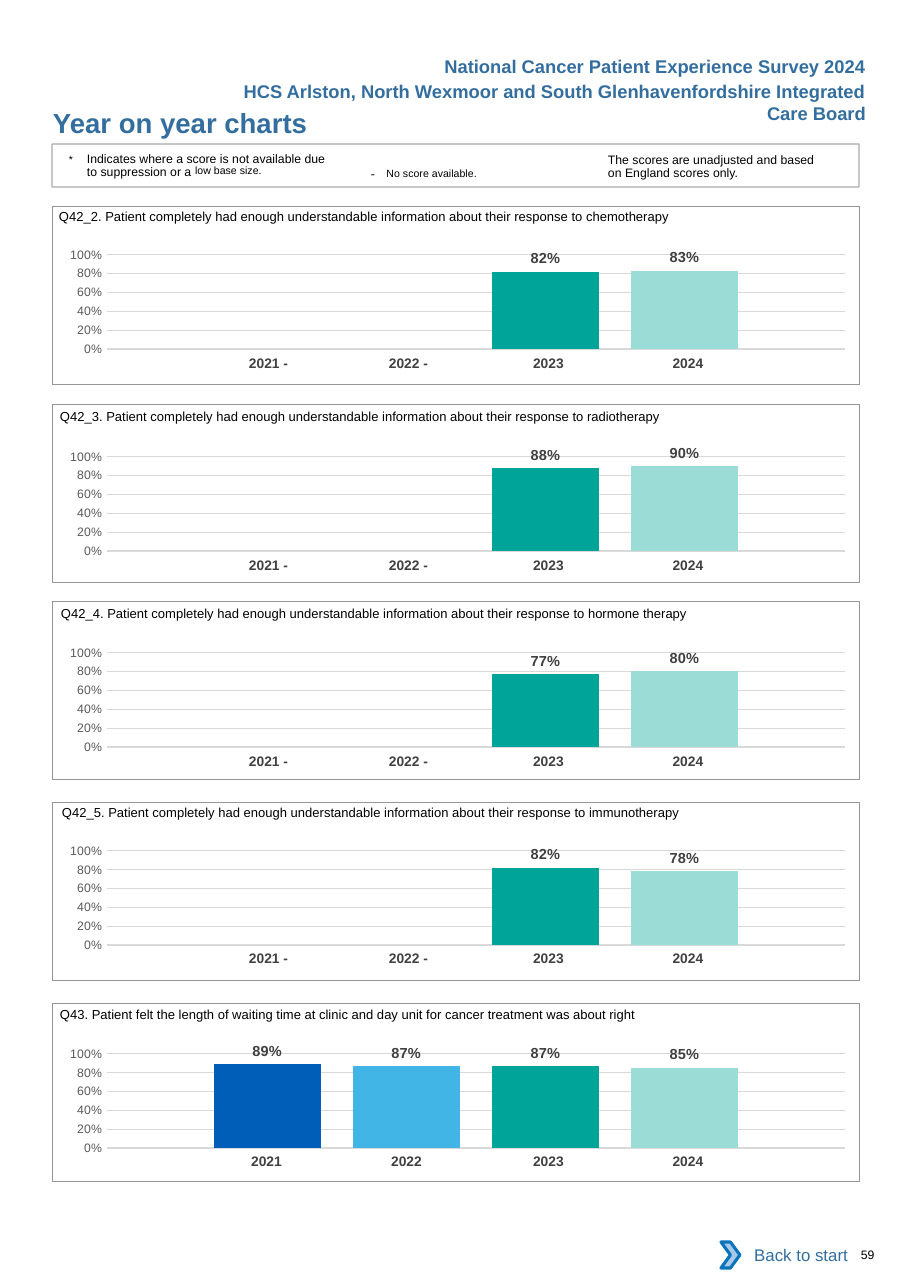
from pptx import Presentation
from pptx.chart.data import CategoryChartData
from pptx.dml.color import RGBColor
from pptx.enum.chart import XL_CHART_TYPE as ChartType, XL_LABEL_POSITION as LabelPos, XL_TICK_MARK as Tick
from pptx.enum.shapes import MSO_SHAPE as Shape
from pptx.enum.text import MSO_ANCHOR as Anchor, PP_ALIGN as Align
from pptx.oxml import parse_xml
from pptx.oxml.ns import nsdecls, qn
from pptx.util import Pt

PX = 914400 / 110.2
PAGE = (910, 1288)
BLUE, BLACK, GREY = "336E9F", "000000", "939598"
NO_TABLE_STYLE = "{2D5ABB26-0587-4C30-8999-92F81FD0307C}"

ENOUGH_INFO = "Patient completely had enough understandable information about their response to "
YEARS = [("2021", "005EB8"), ("2022", "41B6E6"), ("2023", "00A499"), ("2024", "9CDCD7")]
QUESTIONS = [
    ("Q42_2. " + ENOUGH_INFO + "chemotherapy", (59, 198), 206, 234, (None, None, 0.82, 0.83)),
    ("Q42_3. " + ENOUGH_INFO + "radiotherapy", (60, 398), 404, 436, (None, None, 0.88, 0.90)),
    ("Q42_4. " + ENOUGH_INFO + "hormone therapy", (61, 596), 601, 632, (None, None, 0.77, 0.80)),
    ("Q42_5. " + ENOUGH_INFO + "immunotherapy", (62, 795), 802, 830, (None, None, 0.82, 0.78)),
    ("Q43. Patient felt the length of waiting time at clinic and day unit for cancer treatment was about right",
     (60, 996), 1003, 1033, (0.89, 0.87, 0.87, 0.85)),
]
HEADINGS = [
    ((400, 50, 477, 33), [("National Cancer Patient Experience Survey 2024", 12)]),
    ((190, 75, 687, 55),
     [("HCS Arlston, North Wexmoor and South Glenhavenfordshire Integrated Care Board", 12)]),
]
PAGE_TITLE = ((53, 106, 496, 33), [("Year on year charts", 18)])
SUPPRESSED_NOTE = [("*\t", 12, 3), ("Indicates where a score is not available due to suppression or a ", 8),
                   ("low base", 12, 7), (" size.", 12, 7)]
NO_SCORE_NOTE = [("- ", 8, 0, 2.6), ("No score available.", 12, 3)]
UNADJUSTED_NOTE = [("The scores are unadjusted and based on England scores only.", 8)]

FRAME_LEFT, FRAME_WIDTH, FRAME_HEIGHT = 52, 807, 178
CHART_LEFT, CHART_HEIGHT = 43, 142
YEAR_LEFT, YEAR_DROP, YEAR_HEIGHT = 191, 116, 30
YEAR_WIDTHS = (140, 140, 148, 140)
YEAR_MARGINS = ((11, 0), (11, 0), (11, 4), (11, 13))
DASH_MARGIN = 4
PLOT = {"x": 0.079, "y": 0.145, "w": 0.915, "h": 0.666}


def emu(*lengths):
    return [round(length * PX) for length in lengths]


def rgb(value):
    return RGBColor.from_string(value)


def style(font, size, color, bold=False):
    font.name, font.size, font.bold = "Arial", Pt(size), bold
    font.color.rgb = rgb(color)


def add_runs(paragraph, pieces, color=BLACK, bold=False):
    for words, size, *extras in pieces:
        run = paragraph.add_run()
        run.text = words
        style(run.font, size, color, bold)
        raised, spacing = (extras + [0, 0])[:2]
        properties = run._r.get_or_add_rPr()
        if raised:
            properties.set("baseline", str(raised * 1000))
        if spacing:
            properties.set("spc", str(round(spacing * 100)))


def add_text(slide, box, pieces, color=BLACK, bold=False, align=Align.LEFT,
             margins=(0, 0, 0, 0), line=None, hanging=0):
    text = slide.shapes.add_textbox(*emu(*box)).text_frame
    text.word_wrap = True
    text.margin_left, text.margin_top, text.margin_right, text.margin_bottom = emu(*margins)
    paragraph = text.paragraphs[0]
    paragraph.alignment = align
    if line:
        paragraph.line_spacing = Pt(line)
    if hanging:
        indent = emu(hanging)[0]
        properties = paragraph._p.get_or_add_pPr()
        properties.set("marL", str(indent))
        properties.set("indent", str(-indent))
    add_runs(paragraph, pieces, color, bold)


def add_block(slide, kind, box, fill=None, line=None, width=0.5):
    block = slide.shapes.add_shape(kind, *emu(*box))
    block.shadow.inherit = False
    if fill:
        block.fill.solid()
        block.fill.fore_color.rgb = rgb(fill)
    else:
        block.fill.background()
    if line:
        block.line.color.rgb = rgb(line)
        block.line.width = Pt(width)
    else:
        block.line.fill.background()
    return block


def add_years(slide, top, scores):
    holder = slide.shapes.add_table(
        1, len(YEARS), *emu(YEAR_LEFT, top, sum(YEAR_WIDTHS), YEAR_HEIGHT))
    for style_id in holder.element.iter(qn("a:tableStyleId")):
        style_id.text = NO_TABLE_STYLE
    table = holder.table
    table.first_row = table.horz_banding = False
    for column, ((year, _), score) in enumerate(zip(YEARS, scores)):
        table.columns[column].width = emu(YEAR_WIDTHS[column])[0]
        cell = table.cell(0, column)
        cell.fill.background()
        left, right = YEAR_MARGINS[column]
        missing = score is None
        cell.margin_left, cell.margin_right = emu(left + DASH_MARGIN * missing, right)
        paragraph = cell.text_frame.paragraphs[0]
        paragraph.alignment = Align.CENTER
        add_runs(paragraph, [(year + " -" * missing, 9)], "414042", True)


def add_scores(slide, top, scores):
    data = CategoryChartData(number_format="0%")
    data.categories = ["1"]
    for number, score in enumerate(scores, 1):
        data.add_series(f"Series {number}", [score])
    chart = slide.shapes.add_chart(
        ChartType.COLUMN_CLUSTERED, *emu(CHART_LEFT, top, FRAME_WIDTH, CHART_HEIGHT), data).chart
    chart.has_legend = chart.has_title = False
    chart.font.name, chart.font.size = "Calibri", Pt(10)
    chart.font.color.rgb = rgb(BLACK)
    chart.category_axis.visible = False

    axis = chart.value_axis
    axis.minimum_scale, axis.maximum_scale, axis.major_unit = 0, 1, 0.2
    axis.major_tick_mark = axis.minor_tick_mark = Tick.NONE
    axis.format.line.fill.background()
    axis.major_gridlines.format.line.color.rgb = rgb("D9D9D9")
    axis.major_gridlines.format.line.width = Pt(0.75)
    axis.tick_labels.number_format, axis.tick_labels.number_format_is_linked = "0%", False
    style(axis.tick_labels.font, 8, "595959")

    plot = chart.plots[0]
    plot.gap_width, plot.overlap, plot.vary_by_categories = 200, -30, False
    for bar, (_, color) in zip(plot.series, YEARS):
        bar.format.fill.solid()
        bar.format.fill.fore_color.rgb = rgb(color)
        labels = bar.data_labels
        labels.show_value, labels.position = True, LabelPos.OUTSIDE_END
        labels.number_format, labels.number_format_is_linked = "0%", False
        style(labels.font, 9.5, "404040", True)

    area = chart.element.find(".//" + qn("c:plotArea"))
    for old in area.findall(qn("c:layout")):
        area.remove(old)
    modes = "".join(f'<c:{side}Mode val="edge"/>' for side in "xy")
    sizes = "".join(f'<c:{side} val="{share}"/>' for side, share in PLOT.items())
    area.insert(0, parse_xml(
        f'<c:layout {nsdecls("c")}><c:manualLayout><c:layoutTarget val="inner"/>'
        f'{modes}{sizes}</c:manualLayout></c:layout>'))


def add_notes_bar(slide):
    add_text(slide, (608, 152, 221, 30), UNADJUSTED_NOTE, margins=(0, 3, 0, 0), line=8.1)
    add_text(slide, (360, 155, 202, 26), NO_SCORE_NOTE, margins=(11, 5, 11, 5))
    add_text(slide, (69, 152, 265, 30), SUPPRESSED_NOTE, margins=(0, 3, 0, 0), line=8.1, hanging=18)
    bar = add_block(slide, Shape.RECTANGLE, (52, 144, FRAME_WIDTH, 43), line=GREY, width=0.75)
    color = bar.line._ln.find(".//" + qn("a:srgbClr"))
    color.append(parse_xml(f'<a:alpha {nsdecls("a")} val="80000"/>'))


def add_footer(slide):
    back = add_block(slide, Shape.RECTANGLE, (729, 1232, 130, 46), fill="FFFFFF")
    back.text_frame.vertical_anchor = Anchor.MIDDLE
    paragraph = back.text_frame.paragraphs[0]
    paragraph.alignment = Align.RIGHT
    add_runs(paragraph, [("Back to start", 11)], BLUE)
    add_block(slide, Shape.CHEVRON, (721, 1242, 19, 26), fill="A8C7E9", line="0A74BB", width=2)
    add_text(slide, (861, 1247, 46, 14), [("59", 8)])


def main():
    deck = Presentation()
    deck.slide_width, deck.slide_height = emu(*PAGE)
    slide = deck.slides.add_slide(deck.slide_layouts[6])
    add_text(slide, *PAGE_TITLE, color=BLUE, bold=True)
    for question, (left, top), frame_top, chart_top, scores in QUESTIONS:
        add_text(slide, (left, top, 795, 26), [(question, 8.5)], margins=(0, 10, 0, 0))
        add_years(slide, chart_top + YEAR_DROP, scores)
        add_scores(slide, chart_top, scores)
        add_block(slide, Shape.RECTANGLE, (FRAME_LEFT, frame_top, FRAME_WIDTH, FRAME_HEIGHT), line=GREY)
    add_notes_bar(slide)
    for box, pieces in HEADINGS:
        add_text(slide, box, pieces, BLUE, True, Align.RIGHT, margins=(11, 5, 11, 5))
    add_footer(slide)
    deck.save("out.pptx")


if __name__ == "__main__":
    main()
